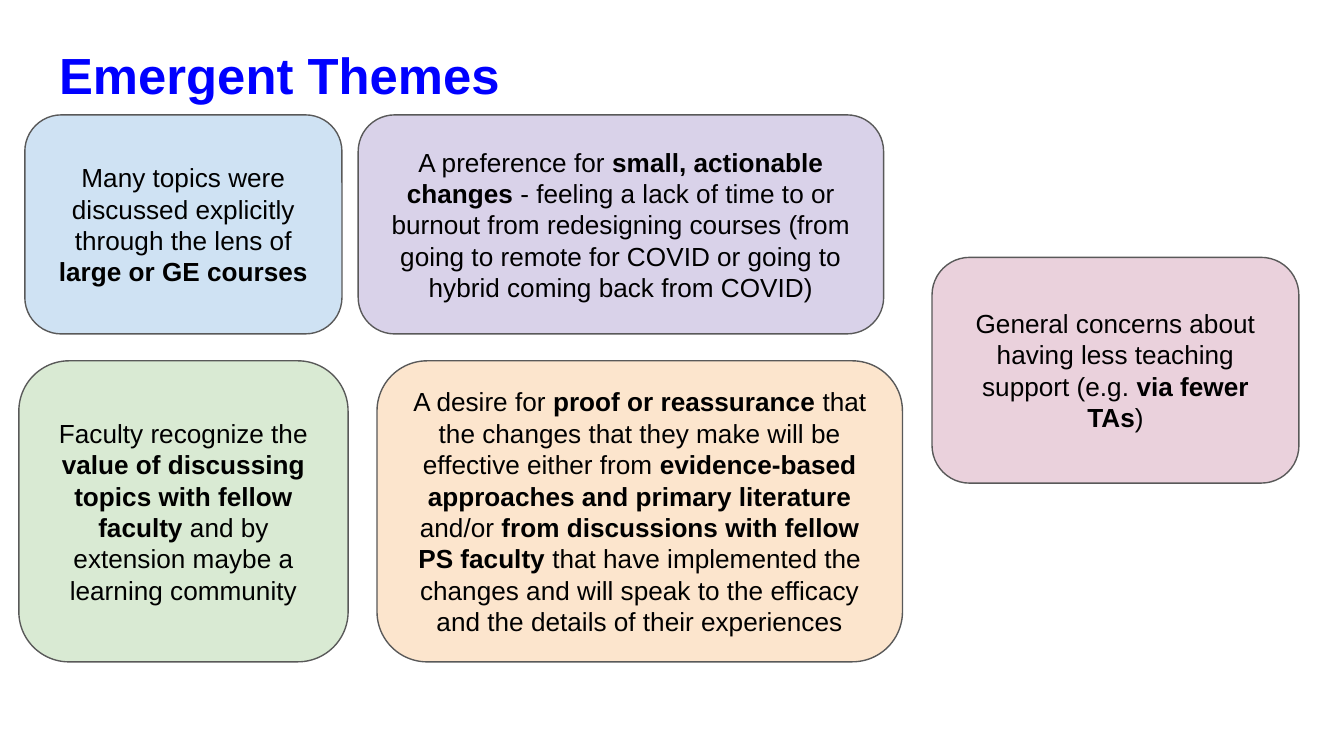
from dataclasses import dataclass

import pptx
import pptx.dml.color
import pptx.enum.shapes
import pptx.enum.text
import pptx.slide
import pptx.text.text
import pptx.util

PX = 4572  # EMU per px, at 200 px to the inch
FONT = "Arial"
INSET = 20
TOP_ROW, TOP_HEIGHT = 171, 326
BOTTOM_ROW, BOTTOM_HEIGHT = 537, 448
WIDE = 782


@dataclass
class Theme:
    left: int
    top: int
    width: int
    height: int
    fill: str
    phrases: list[str]  # plain and bold phrases alternate, plain first


THEMES = [
    Theme(37, TOP_ROW, 472, TOP_HEIGHT, "CFE2F3", [
        "Many topics were discussed explicitly through the lens of ",
        "large or GE courses",
    ]),
    Theme(533, TOP_ROW, WIDE, TOP_HEIGHT, "D9D2E9", [
        "A preference for ",
        "small, actionable changes",
        " - feeling a lack of time to or burnout from redesigning courses "
        "(from going to remote for COVID or going to hybrid coming back from COVID)",
    ]),
    Theme(28, BOTTOM_ROW, 490, BOTTOM_HEIGHT, "D9EAD3", [
        "Faculty recognize the ",
        "value of discussing topics with fellow faculty",
        " and by extension maybe a learning community",
    ]),
    Theme(1387, 383, 546, 336, "EAD1DC", [
        "General concerns about having less teaching support (e.g. ",
        "via fewer TAs",
        ")",
    ]),
    Theme(561, BOTTOM_ROW, WIDE, BOTTOM_HEIGHT, "FCE5CD", [
        "A desire for ",
        "proof or reassurance",
        " that the changes that they make will be effective either from ",
        "evidence-based approaches and primary literature",
        " and/or ",
        "from discussions with fellow PS faculty",
        " that have implemented the changes and will speak to the efficacy "
        "and the details of their experiences",
    ]),
]


def px(length: int) -> pptx.util.Emu:
    return pptx.util.Emu(length * PX)


def color(value: str) -> pptx.dml.color.RGBColor:
    return pptx.dml.color.RGBColor.from_string(value)


def set_frame(frame: pptx.text.text.TextFrame,
              anchor: pptx.enum.text.MSO_ANCHOR) -> None:
    frame.auto_size = pptx.enum.text.MSO_AUTO_SIZE.NONE
    frame.word_wrap = True
    frame.vertical_anchor = anchor
    frame.margin_left = frame.margin_right = px(INSET)
    frame.margin_top = frame.margin_bottom = px(INSET)


def add_run(paragraph: pptx.text.text._Paragraph, text: str, size: float,
            text_color: str, bold: bool) -> None:
    run = paragraph.add_run()
    run.text = text
    run.font.name = FONT
    run.font.size = pptx.util.Pt(size)
    run.font.bold = bold
    run.font.color.rgb = color(text_color)


def format_title(slide: pptx.slide.Slide, text: str) -> None:
    title = slide.shapes.title
    title.left, title.top = px(68), px(45)
    title.width, title.height = px(1864), px(126)
    set_frame(title.text_frame, pptx.enum.text.MSO_ANCHOR.TOP)
    paragraph = title.text_frame.paragraphs[0]
    paragraph.alignment = pptx.enum.text.PP_ALIGN.LEFT
    add_run(paragraph, text, 27.2, "0000FF", True)


def add_theme(slide: pptx.slide.Slide, theme: Theme) -> None:
    shape = slide.shapes.add_shape(
        pptx.enum.shapes.MSO_SHAPE.ROUNDED_RECTANGLE,
        px(theme.left), px(theme.top), px(theme.width), px(theme.height))
    shape.shadow.inherit = False
    shape.fill.solid()
    shape.fill.fore_color.rgb = color(theme.fill)
    shape.line.color.rgb = color("595959")
    shape.line.width = pptx.util.Pt(0.75)
    set_frame(shape.text_frame, pptx.enum.text.MSO_ANCHOR.MIDDLE)
    paragraph = shape.text_frame.paragraphs[0]
    paragraph.alignment = pptx.enum.text.PP_ALIGN.CENTER
    for index, phrase in enumerate(theme.phrases):
        add_run(paragraph, phrase, 14, "000000", index % 2 == 1)


def main() -> None:
    presentation = pptx.Presentation()
    presentation.slide_width, presentation.slide_height = px(2000), px(1125)
    # Layout 5 is title only
    slide = presentation.slides.add_slide(presentation.slide_layouts[5])
    slide.background.fill.solid()
    slide.background.fill.fore_color.rgb = color("FFFFFF")

    # Heading
    format_title(slide, "Emergent Themes")

    # Theme cards
    for theme in THEMES:
        add_theme(slide, theme)

    presentation.save("out.pptx")


if __name__ == "__main__":
    main()
